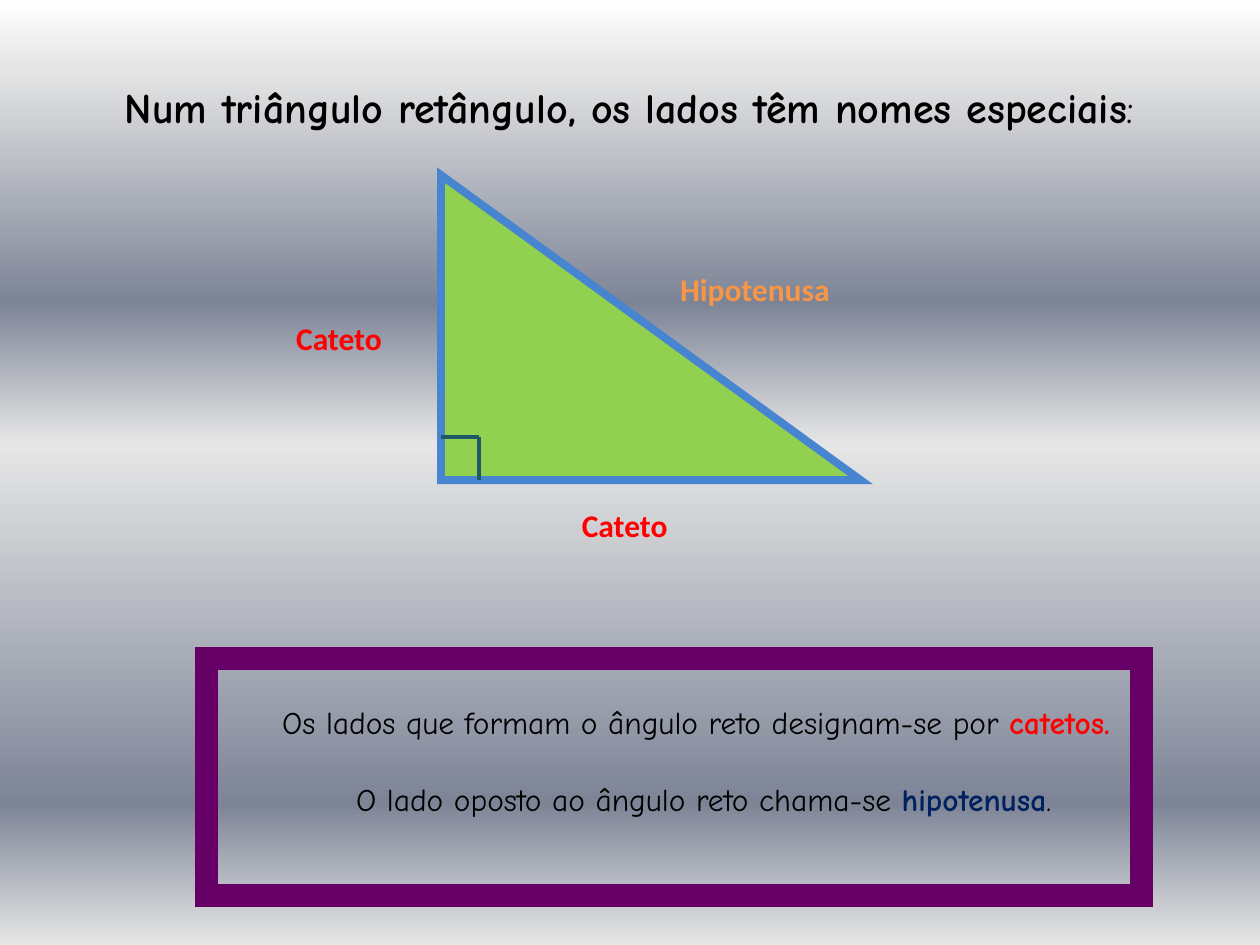
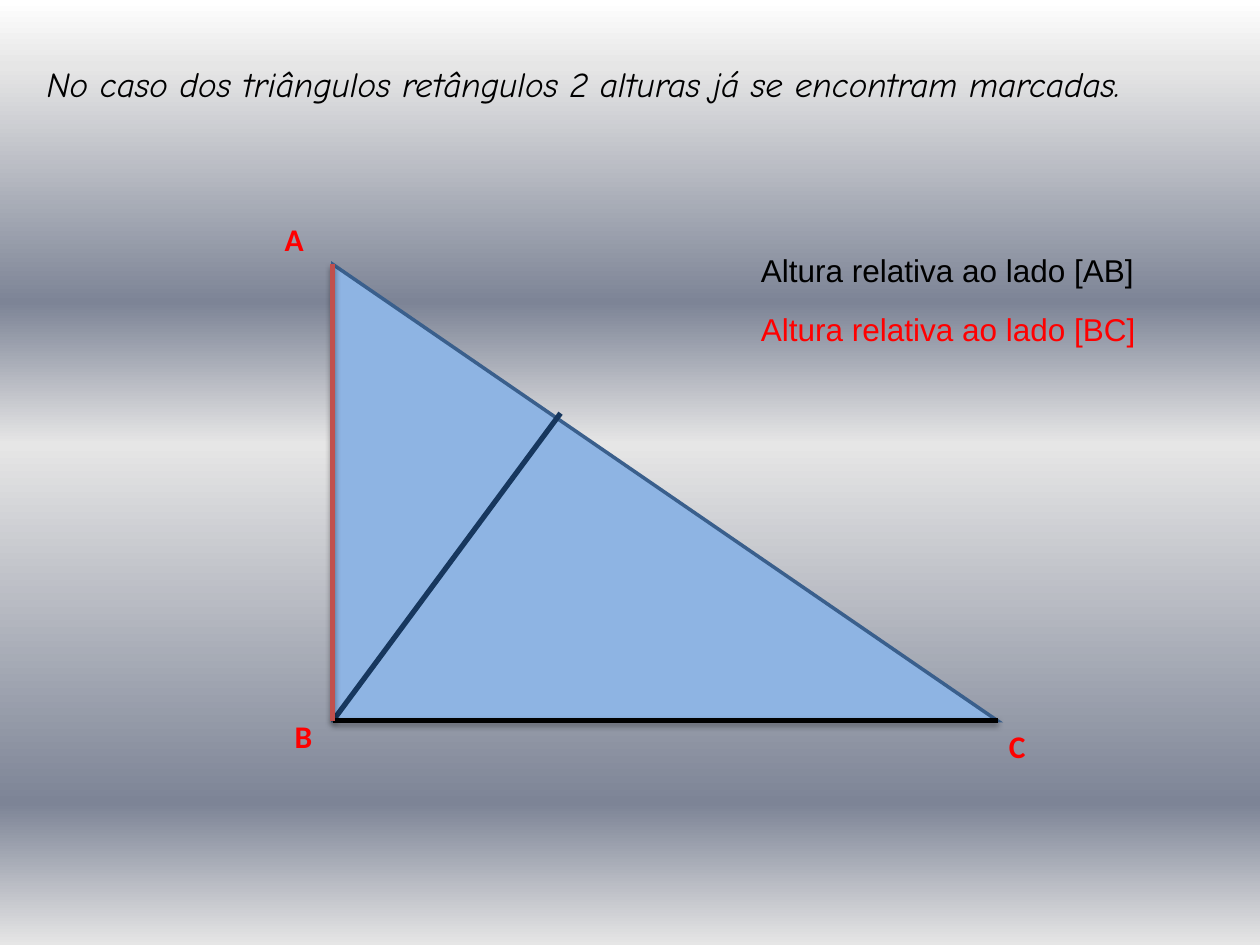
import pptx
import pptx.util
import pptx.dml.color
import pptx.enum.shapes
import pptx.enum.text
import pptx.oxml
import pptx.oxml.ns
import lxml.etree

Cm = pptx.util.Cm
Pt = pptx.util.Pt
qn = pptx.oxml.ns.qn
MSO_SHAPE = pptx.enum.shapes.MSO_SHAPE

COLOURS = {
    "black": "000000", "red": "FF0000", "orange": "F79646", "navy": "002060",
    "green": "92D050", "blue": "4785D1", "teal": "205867", "purple": "660066",
    "sky": "8EB4E3", "steel": "3A5F8C", "altitude": "17375E", "brick": "C0504D",
    "white": "FFFFFF", "light": "E6E6E6", "slate": "7D8496",
}
BACKGROUND_STOPS = [(0, "white"), (7, "light"), (32, "slate"),
                    (47, "light"), (85, "slate"), (100, "light")]
HAND_FONT, LABEL_FONT, LEGEND_FONT = "Comic Neue", "Calibri", "Arial"
TITLE_LEFT, TITLE_WIDTH = 0.69, 24
LINE_HEIGHT = 1.02


def rgb(name):
    return pptx.dml.color.RGBColor.from_string(COLOURS[name])


def add_child(parent, tag, **attributes):
    return lxml.etree.SubElement(
        parent, qn(tag), {key: str(value) for key, value in attributes.items()})


class Deck:
    def __init__(self):
        self.presentation = pptx.Presentation()
        self.presentation.slide_width = Cm(25.4)
        self.presentation.slide_height = Cm(19.05)
        self.slide = None
        self.paint_master()

    def paint_master(self):
        """Give every slide the banded vertical gradient."""
        master = self.presentation.slide_master
        fill = master.background.fill
        fill.gradient()
        fill.gradient_angle = 270
        stops = master.element.find(".//" + qn("p:bg")).find(".//" + qn("a:gsLst"))
        for stop in list(stops):
            stops.remove(stop)
        for percent, name in BACKGROUND_STOPS:
            stop = add_child(stops, "a:gs", pos=percent * 1000)
            add_child(stop, "a:srgbClr", val=COLOURS[name])

    def new_slide(self):
        self.slide = self.presentation.slides.add_slide(
            self.presentation.slide_layouts[6])

    def add_runs(self, paragraph, runs, font, size):
        """Fill a paragraph with runs given as (text, colour, style letters)."""
        for text, colour, style in runs:
            run = paragraph.add_run()
            run.text = text
            run.font.name = font
            run.font.size = Pt(size)
            run.font.color.rgb = rgb(colour)
            run.font.bold = "b" in style
            run.font.italic = "i" in style

    def text(self, left, top, width, height, runs, font, size):
        box = self.slide.shapes.add_textbox(Cm(left), Cm(top), Cm(width), Cm(height))
        box.text_frame.word_wrap = True
        self.add_runs(box.text_frame.paragraphs[0], runs, font, size)
        return box.text_frame

    def title(self, top, height, runs, size):
        return self.text(TITLE_LEFT, top, TITLE_WIDTH, height, runs, HAND_FONT, size)

    def label(self, left, top, width, text, colour="red"):
        self.text(left, top, width, LINE_HEIGHT, [(text, colour, "b")], LABEL_FONT, 18)

    def shape(self, kind, left, top, width, height, line, weight, fill=None, group=None):
        shapes = (group or self.slide).shapes
        shape = shapes.add_shape(kind, Cm(left), Cm(top), Cm(width), Cm(height))
        shape.shadow.inherit = False
        if fill:
            shape.fill.solid()
            shape.fill.fore_color.rgb = rgb(fill)
        else:
            shape.fill.background()
        shape.line.color.rgb = rgb(line)
        shape.line.width = Pt(weight)
        add_child(shape.element.spPr.find(qn("a:ln")), "a:miter", lim=800000)
        return shape

    def line(self, start, end, colour, weight, shadow=False, group=None):
        shapes = (group or self.slide).shapes
        connector = shapes.add_connector(
            pptx.enum.shapes.MSO_CONNECTOR.STRAIGHT,
            Cm(start[0]), Cm(start[1]), Cm(end[0]), Cm(end[1]))
        connector.line.color.rgb = rgb(colour)
        connector.line.width = Pt(weight)
        effects = add_child(connector.element.spPr, "a:effectLst")
        if shadow:
            outer = add_child(effects, "a:outerShdw", blurRad=Pt(3.1), dist=Pt(1.8),
                              dir=5400000, rotWithShape=0)
            tint = add_child(outer, "a:srgbClr", val=COLOURS["black"])
            add_child(tint, "a:alpha", val=35000)

    def definitions(self, frame, paragraphs):
        """Put (indent, runs) paragraphs into a frame, well apart."""
        text_frame = frame.text_frame
        text_frame.word_wrap = True
        text_frame.vertical_anchor = pptx.enum.text.MSO_ANCHOR.TOP
        text_frame.margin_top = Cm(0.9)
        for index, (indent, runs) in enumerate(paragraphs):
            paragraph = text_frame.add_paragraph() if index else text_frame.paragraphs[0]
            paragraph.alignment = pptx.enum.text.PP_ALIGN.LEFT
            if index:
                paragraph.space_before = Pt(22)
            properties = paragraph._p.get_or_add_pPr()
            properties.set("marL", str(Cm(indent)))
            properties.set("indent", "0")
            self.add_runs(paragraph, runs, HAND_FONT, 18)


def side_names_slide(deck):
    deck.new_slide()
    left, top, width, height = 8.89, 3.53, 8.46, 6.15
    corner_x, corner_y, bottom = left + 0.76, 8.81, top + height
    figure = deck.slide.shapes.add_group_shape()
    deck.shape(MSO_SHAPE.RIGHT_TRIANGLE, left, top, width, height,
               "blue", 4.5, "green", figure)
    deck.line((left, corner_y), (corner_x, corner_y), "teal", 2.25, group=figure)
    deck.line((corner_x, corner_y), (corner_x, bottom), "teal", 2.25, group=figure)

    frame = deck.shape(MSO_SHAPE.RECTANGLE, 4.17, 13.28, 18.85, 4.78, "purple", 13.25)
    deck.definitions(frame, [
        (1.27, [("Os lados que formam o ângulo reto designam-se por ", "black", ""),
                ("catetos.", "red", "b")]),
        (2.76, [("O lado oposto ao ângulo reto chama-se ", "black", ""),
                ("hipotenusa", "navy", "b"), (".", "black", "")]),
    ])
    deck.label(13.46, 5.31, 6.76, "Hipotenusa", "orange")
    for x, y in [(5.72, 6.3), (11.48, 10.08)]:
        deck.label(x, y, 4.95, "Cateto")
    title = deck.title(1.52, 1.3, [
        ("Num triângulo retângulo, os lados têm nomes especiais", "black", "b"),
        (":", "black", "")], 24)
    title.paragraphs[0].alignment = pptx.enum.text.PP_ALIGN.CENTER


def altitudes_slide(deck):
    deck.new_slide()
    title = deck.title(1.12, 1.12, [
        ("No caso dos triângulos retângulos 2 alturas já se encontram marcadas.",
         "black", "i")], 20)
    title.word_wrap = False
    title.vertical_anchor = pptx.enum.text.MSO_ANCHOR.MIDDLE

    left, top, width, height = 6.71, 5.33, 13.4, 9.2
    vertex_a, vertex_b = (left, top), (left, top + height)
    vertex_c = (left + width, top + height)
    altitude_foot = (11.3, 8.33)
    deck.shape(MSO_SHAPE.RIGHT_TRIANGLE, left, top, width, height, "steel", 2, "sky")
    for name, x, y in [("A", 5.49, 4.32), ("C", 20.09, 14.53), ("B", 5.69, 14.33)]:
        deck.label(x, y, 1.4, name)
    deck.line(vertex_b, altitude_foot, "altitude", 3)
    deck.line(vertex_b, vertex_c, "black", 3, shadow=True)
    for side, y, colour in [("AB", 4.93, "black"), ("BC", 6.12, "red")]:
        deck.text(15.09, y, 9.09, LINE_HEIGHT,
                  [(f"Altura relativa ao lado [{side}]", colour, "")], LEGEND_FONT, 18)
    deck.line(vertex_a, vertex_b, "brick", 3, shadow=True)


def main():
    deck = Deck()
    side_names_slide(deck)
    altitudes_slide(deck)
    deck.presentation.save("out.pptx")


if __name__ == "__main__":
    main()
